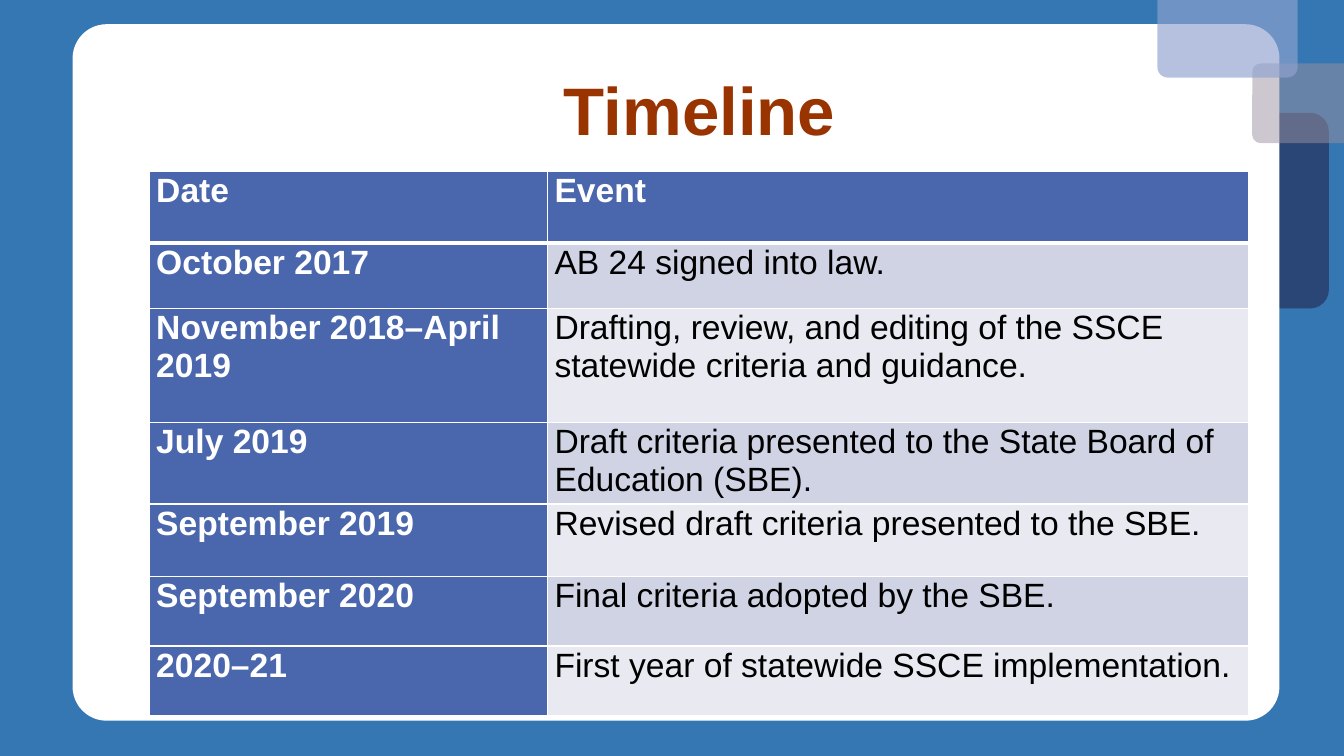
from dataclasses import dataclass

from lxml.etree import SubElement
from pptx import Presentation
from pptx.dml.color import RGBColor
from pptx.enum.shapes import MSO_SHAPE
from pptx.enum.text import MSO_ANCHOR, PP_ALIGN
from pptx.oxml import parse_xml
from pptx.oxml.ns import nsdecls, qn
from pptx.slide import Slide
from pptx.table import _Cell
from pptx.util import Inches, Pt


@dataclass(frozen=True)
class Theme:
    font: str = "Arial"
    back: str = "3477B2"
    white: str = "FFFFFF"
    black: str = "000000"
    title: str = "993300"
    head: str = "4A66AC"
    odd: str = "D0D3E3"
    even: str = "E9EAF1"
    navy: str = "242852"
    mauve: str = "9D90A0"
    sky: str = "90A2CF"
    title_size: int = 48
    cell_size: int = 24
    thin: int = 1
    thick: int = 3


@dataclass(frozen=True)
class Panel:
    left: float
    top: float
    width: float
    height: float
    round: float
    color: str
    alpha: int = 100


@dataclass(frozen=True)
class Entry:
    date: str
    event: str
    height: float


THEME = Theme()

PANELS = [
    Panel(10.96, 1.12, 2.22, 1.94, 0.095, THEME.navy, 62),
    Panel(0.72, 0.24, 11.97, 6.91, 0.049, THEME.white),
    Panel(12.42, 0.63, 2.22, 0.79, 0.103, THEME.mauve, 50),
    Panel(11.48, -0.53, 1.39, 1.3, 0.079, THEME.sky, 66),
]

ENTRIES = [
    Entry("Date", "Event", 0.71),
    Entry("October 2017", "AB 24 signed into law.", 0.65),
    Entry("November 2018–April 2019",
          "Drafting, review, and editing of the SSCE statewide criteria and guidance.", 1.13),
    Entry("July 2019", "Draft criteria presented to the State Board of Education (SBE).", 0.58),
    Entry("September 2019", "Revised draft criteria presented to the SBE.", 0.72),
    Entry("September 2020", "Final criteria adopted by the SBE.", 0.69),
    Entry("2020–21", "First year of statewide SSCE implementation.", 0.69),
]

COLS = [3.95, 6.95]


def rgb(color: str) -> RGBColor:
    return RGBColor.from_string(color)


def add_panel(slide: Slide, panel: Panel) -> None:
    shape = slide.shapes.add_shape(
        MSO_SHAPE.ROUNDED_RECTANGLE, Inches(panel.left), Inches(panel.top),
        Inches(panel.width), Inches(panel.height))
    shape.adjustments[0] = panel.round
    shape.shadow.inherit = False
    shape.line.fill.background()
    shape.fill.solid()
    shape.fill.fore_color.rgb = rgb(panel.color)
    if panel.alpha < 100:
        tint = shape.fill._xPr.find(qn("a:solidFill"))[0]
        SubElement(tint, qn("a:alpha"), val=str(panel.alpha * 1000))


def style_text(para, size: int, color: str, bold: bool) -> None:
    font = para.font
    font.name = THEME.font
    font.size = Pt(size)
    font.bold = bold
    font.color.rgb = rgb(color)


def add_title(slide: Slide, text: str) -> None:
    box = slide.shapes.add_textbox(Inches(1.47), Inches(0.4), Inches(10.94), Inches(1.45))
    frame = box.text_frame
    frame.word_wrap = True
    frame.vertical_anchor = MSO_ANCHOR.MIDDLE
    para = frame.paragraphs[0]
    para.text = text
    para.alignment = PP_ALIGN.CENTER
    para.line_spacing = 0.9
    style_text(para, THEME.title_size, THEME.title, True)


def set_edges(cell: _Cell, top: int, bottom: int) -> None:
    """Draw the cell borders; they must precede the fill in the XML."""
    edges = {"lnL": THEME.thin, "lnR": THEME.thin, "lnT": top, "lnB": bottom}
    props = cell._tc.get_or_add_tcPr()
    for spot, (tag, width) in enumerate(edges.items()):
        props.insert(spot, parse_xml(
            f'<a:{tag} {nsdecls("a")} w="{Pt(width)}"><a:solidFill>'
            f'<a:srgbClr val="{THEME.white}"/></a:solidFill></a:{tag}>'))


def fill_cell(cell: _Cell, text: str, row: int, col: int) -> None:
    strong = row == 0 or col == 0
    band = THEME.odd if row % 2 else THEME.even
    cell.margin_left = cell.margin_right = Inches(0.07)
    cell.margin_top = Inches(0.01)
    cell.margin_bottom = 0
    cell.fill.solid()
    cell.fill.fore_color.rgb = rgb(THEME.head if strong else band)
    set_edges(cell, THEME.thick if row == 1 else THEME.thin,
              THEME.thick if row == 0 else THEME.thin)
    para = cell.text_frame.paragraphs[0]
    para.text = text
    para.space_after = Pt(12)
    style_text(para, THEME.cell_size, THEME.white if strong else THEME.black, strong)


def add_dates(slide: Slide) -> None:
    height = sum(entry.height for entry in ENTRIES)
    table = slide.shapes.add_table(
        len(ENTRIES), len(COLS), Inches(1.48), Inches(1.7),
        Inches(sum(COLS)), Inches(height)).table
    table.first_col = True
    for col, width in enumerate(COLS):
        table.columns[col].width = Inches(width)
    for row, entry in enumerate(ENTRIES):
        table.rows[row].height = Inches(entry.height)
        for col, text in enumerate((entry.date, entry.event)):
            fill_cell(table.cell(row, col), text, row, col)


def main() -> None:
    deck = Presentation()
    deck.slide_width = Inches(13.33)
    deck.slide_height = Inches(7.5)
    slide = deck.slides.add_slide(deck.slide_layouts[6])
    slide.background.fill.solid()
    slide.background.fill.fore_color.rgb = rgb(THEME.back)
    for panel in PANELS:
        add_panel(slide, panel)
    add_title(slide, "Timeline")
    add_dates(slide)
    deck.save("out.pptx")


if __name__ == "__main__":
    main()
